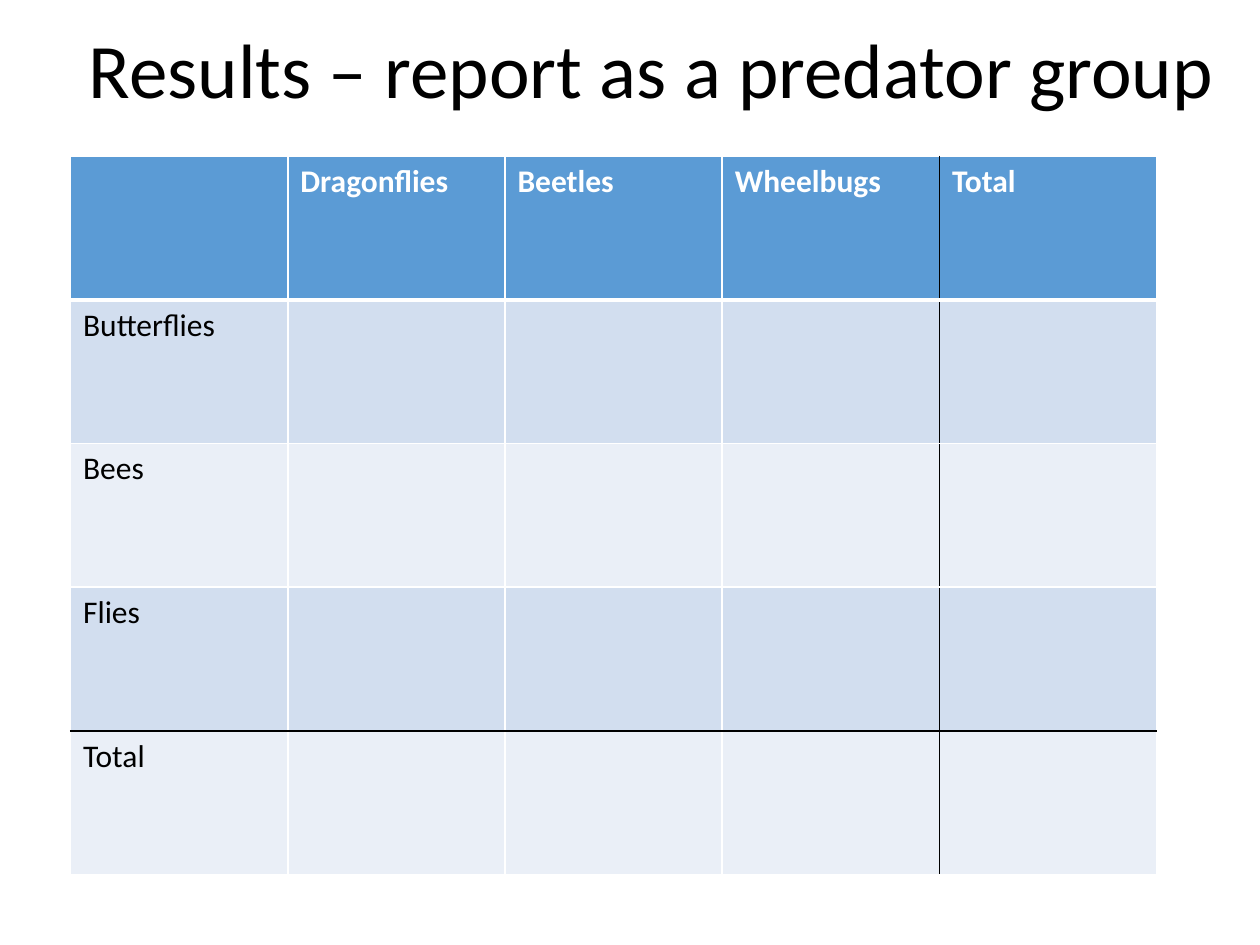
"""Build a results slide with a blank predator and prey tally table."""
from dataclasses import dataclass

from lxml.etree import SubElement
from pptx import Presentation
from pptx.dml.color import RGBColor as Color
from pptx.enum.text import MSO_ANCHOR as Anchor, MSO_AUTO_SIZE as AutoSize, PP_ALIGN as Align
from pptx.oxml.ns import qn
from pptx.util import Pt


@dataclass(frozen=True)
class Theme:
    """Colours, font and type sizes of the deck."""
    font: str = "Calibri"
    title_size: float = 44
    cell_size: float = 18
    ink: str = "000000"
    paper: str = "FFFFFF"
    header: str = "5B9BD5"
    bands: tuple = ("D2DEEF", "EAEFF7")


def write(frame, text, *, font, size, color, bold=False, align=Align.LEFT, spacing=1.0):
    """Put one formatted paragraph into a text frame."""
    para = frame.paragraphs[0]
    para.alignment = align
    para.line_spacing = spacing
    span = para.add_run()
    span.text = text
    span.font.name = font
    span.font.size = Pt(size)
    span.font.bold = bold
    span.font.color.rgb = Color.from_string(color)


class SlideBuilder:
    """Holds the theme and the current page."""

    def __init__(self, page, theme):
        """Keep the page and its theme."""
        self.page = page
        self.theme = theme

    def title(self, text, left, top, width, height):
        """Place and fill the title placeholder."""
        box = self.page.shapes.title
        box.left, box.top, box.width, box.height = map(Pt, (left, top, width, height))
        frame = box.text_frame
        frame.word_wrap = True
        frame.auto_size = AutoSize.NONE
        frame.vertical_anchor = Anchor.MIDDLE
        write(frame, text, font=self.theme.font, size=self.theme.title_size,
              color=self.theme.ink, align=Align.CENTER, spacing=0.9)

    def border(self, cell, side, color, width):
        """Draw one edge of a cell."""
        line = SubElement(cell._tc.get_or_add_tcPr(), qn(f"a:ln{side}"), w=str(Pt(width)))
        fill = SubElement(line, qn("a:solidFill"))
        SubElement(fill, qn("a:srgbClr"), val=color)

    def table(self, columns, rows, left, top, column_width, row_height):
        """Add a tally table whose last row and column are totals."""
        row_count, column_count = len(rows) + 1, len(columns) + 1
        table = self.page.shapes.add_table(
            row_count, column_count, Pt(left), Pt(top),
            Pt(column_width * column_count), Pt(row_height * row_count)).table
        for column in table.columns:
            column.width = Pt(column_width)
        for row in table.rows:
            row.height = Pt(row_height)
        labels = {(0, x): name for x, name in enumerate(columns, 1)}
        labels |= {(y, 0): name for y, name in enumerate(rows, 1)}
        for y in range(row_count):
            for x in range(column_count):
                self.cell(table.cell(y, x), y, x, row_count, column_count, labels.get((y, x)))

    def cell(self, cell, y, x, row_count, column_count, label):
        """Style one cell by its place in the table."""
        theme = self.theme
        for side, edge in (("L", x), ("R", x + 1)):
            self.border(cell, side, theme.ink if edge == column_count - 1 else theme.paper, 1)
        for side, edge in (("T", y), ("B", y + 1)):
            self.border(cell, side, theme.ink if edge == row_count - 1 else theme.paper,
                        3 if edge == 1 else 1)
        cell.fill.solid()
        cell.fill.fore_color.rgb = Color.from_string(
            theme.bands[(y - 1) % 2] if y else theme.header)
        if label:
            write(cell.text_frame, label, font=theme.font, size=theme.cell_size,
                  color=theme.ink if y else theme.paper, bold=y == 0)


def main():
    """Build and save the deck."""
    deck = Presentation()
    deck.slide_width, deck.slide_height = Pt(720), Pt(540)
    builder = SlideBuilder(deck.slides.add_slide(deck.slide_layouts[5]), Theme())
    builder.title("Results – report as a predator group", 40.3, -10, 664, 104.4)
    builder.table(["Dragonflies", "Beetles", "Wheelbugs", "Total"],
                  ["Butterflies", "Bees", "Flies", "Total"],
                  left=40.3, top=89.3, column_width=124.15, row_height=82.1)
    deck.save("out.pptx")


if __name__ == "__main__":
    main()
